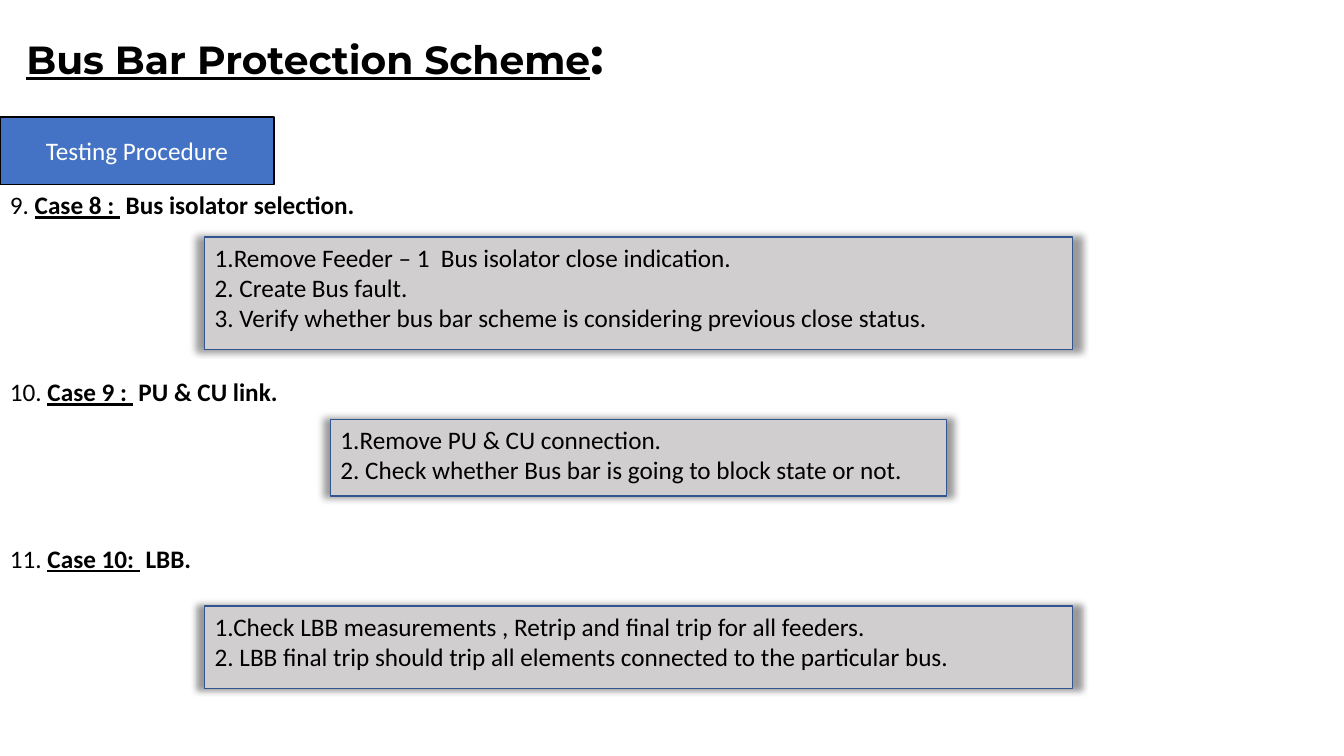
from lxml import etree
from pptx import Presentation
from pptx import util as u
from pptx.dml.color import RGBColor
from pptx.enum import shapes, text
from pptx.oxml import ns

BLACK = RGBColor(0x00, 0x00, 0x00)
WHITE = RGBColor(0xFF, 0xFF, 0xFF)
BLUE = RGBColor(0x44, 0x72, 0xC4)
DARK_BLUE = RGBColor(0x32, 0x54, 0x91)
GREY = RGBColor(0xD0, 0xCE, 0xCE)

SLIDE_W, SLIDE_H = 33.87, 19.05
HEADING_H = 1.02

CASES = [
    ((0, 4.65, SLIDE_W, 3.86), ("9. ", "Case 8 : ", " Bus isolator selection."),
     (5.16, 1.32, 21.87, 2.84),
     ["1.Remove Feeder – 1  Bus isolator close indication.",
      "2. Create Bus fault.",
      "3. Verify whether bus bar scheme is considering previous close status."]),
    ((0, 9.37, SLIDE_W, 3.13), ("10. ", "Case 9 : ", " PU & CU link."),
     (8.33, 1.2, 15.52, 1.93),
     ["1.Remove PU & CU connection.",
      "2. Check whether Bus bar is going to block state or not."]),
    ((0, 13.56, SLIDE_W, 3.79), ("11. ", "Case 10: ", " LBB."),
     (5.16, 1.71, 21.87, 2.08),
     ["1.Check LBB measurements , Retrip and final trip for all feeders.",
      "2. LBB final trip should trip all elements connected to the particular bus."]),
]


def lengths(box):
    return [u.Cm(value) for value in box]


def add_run(p, content, size=18, font="Calibri", color=BLACK, bold=False, underline=False):
    r = p.add_run()
    r.text = content
    r.font.size = u.Pt(size)
    r.font.name = font
    r.font.color.rgb = color
    r.font.bold = bold
    r.font.underline = underline
    return r


def add_panel(s, box, fill, line):
    sp = s.shapes.add_shape(shapes.MSO_SHAPE.RECTANGLE, *lengths(box))
    sp.shadow.inherit = False
    sp.fill.solid()
    sp.fill.fore_color.rgb = fill
    sp.line.color.rgb = line
    sp.line.width = u.Pt(1)
    sp.text_frame.word_wrap = True
    return sp


def add_glow_shadow(sp):
    effects = sp._element.spPr.find(ns.qn("a:effectLst"))
    shadow = etree.SubElement(effects, ns.qn("a:outerShdw"), blurRad=str(u.Pt(5)),
                              sx="102000", sy="102000", algn="ctr", rotWithShape="0")
    color = etree.SubElement(shadow, ns.qn("a:srgbClr"), val=str(BLACK))
    etree.SubElement(color, ns.qn("a:alpha"), val="40000")


def add_title(s, box):
    sp = s.shapes.title
    sp.left, sp.top, sp.width, sp.height = lengths(box)
    tf = sp.text_frame
    tf.word_wrap = True
    tf.auto_size = text.MSO_AUTO_SIZE.NONE
    tf.vertical_anchor = text.MSO_ANCHOR.TOP
    p = tf.paragraphs[0]
    p.alignment = text.PP_ALIGN.LEFT
    add_run(p, "Bus Bar Protection Scheme", size=28, font="Montserrat", bold=True, underline=True)
    add_run(p, ":", size=36, font="Montserrat", bold=True)


def add_badge(s, box):
    tf = add_panel(s, box, BLUE, BLACK).text_frame
    tf.vertical_anchor = text.MSO_ANCHOR.MIDDLE
    p = tf.paragraphs[0]
    p.alignment = text.PP_ALIGN.CENTER
    add_run(p, "Testing Procedure", color=WHITE)


def add_case(s, box, heading, panel, steps):
    left, top, width, _ = box
    sp = s.shapes.add_textbox(*lengths((left, top, width, HEADING_H)))
    sp.text_frame.word_wrap = True
    p = sp.text_frame.paragraphs[0]
    number, case, subject = heading
    add_run(p, number)
    add_run(p, case, bold=True, underline=True)
    add_run(p, subject, bold=True)

    dx, dy, panel_w, panel_h = panel
    sp = add_panel(s, (left + dx, top + dy, panel_w, panel_h), GREY, DARK_BLUE)
    add_glow_shadow(sp)
    tf = sp.text_frame
    tf.vertical_anchor = text.MSO_ANCHOR.TOP
    for i, step in enumerate(steps):
        p = tf.add_paragraph() if i else tf.paragraphs[0]
        p.alignment = text.PP_ALIGN.LEFT
        add_run(p, step)


def main():
    prs = Presentation()
    prs.slide_width, prs.slide_height = lengths((SLIDE_W, SLIDE_H))
    s = prs.slides.add_slide(prs.slide_layouts[5])
    add_title(s, (0.41, 0.48, 30.48, 1.8))
    add_badge(s, (0, 2.95, 6.91, 1.7))
    for case in CASES:
        add_case(s, *case)
    prs.save("out.pptx")


if __name__ == "__main__":
    main()
